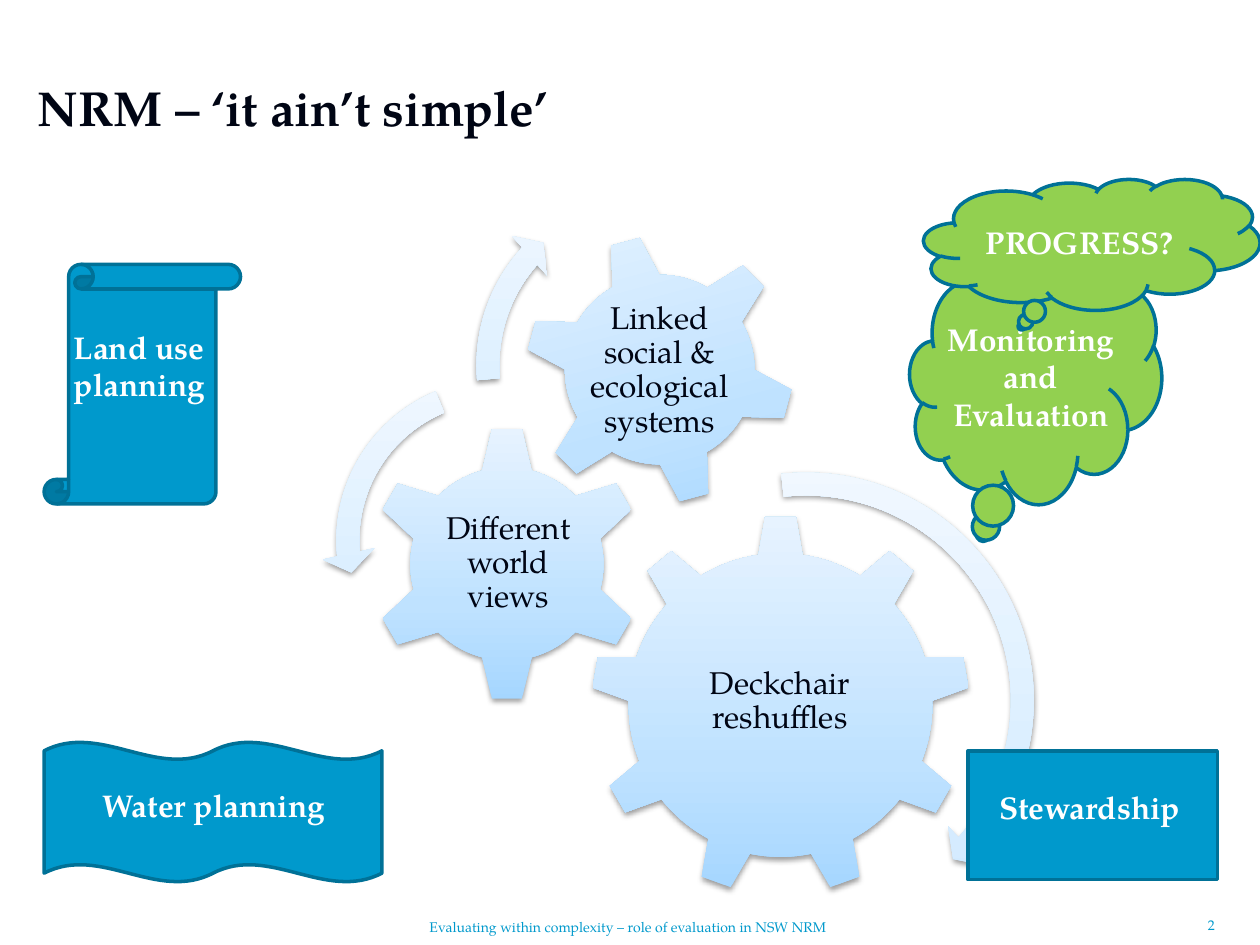
from copy import deepcopy
from dataclasses import dataclass

from lxml import etree
from pptx import Presentation
from pptx.dml.color import RGBColor
from pptx.enum.shapes import MSO_SHAPE
from pptx.enum.text import MSO_ANCHOR, PP_ALIGN
from pptx.oxml.ns import qn
from pptx.util import Cm, Pt

GEAR6, GEAR9 = MSO_SHAPE.GEAR_6, MSO_SHAPE.GEAR_9
ARC, BACK = MSO_SHAPE.CIRCULAR_ARROW, MSO_SHAPE.LEFT_CIRCULAR_ARROW
CLOUD, WAVE = MSO_SHAPE.CLOUD_CALLOUT, MSO_SHAPE.DOUBLE_WAVE
SCROLL, BLOCK = MSO_SHAPE.VERTICAL_SCROLL, MSO_SHAPE.FLOWCHART_PROCESS
TOP, MID = MSO_ANCHOR.TOP, MSO_ANCHOR.MIDDLE
LEFT, MIDST, RIGHT = PP_ALIGN.LEFT, PP_ALIGN.CENTER, PP_ALIGN.RIGHT


@dataclass
class Theme:
    font: str = "TeX Gyre Pagella"
    ink: str = "000514"
    white: str = "FFFFFF"
    blue: str = "0099CC"
    green: str = "92D050"
    edge: str = "007197"
    gear: tuple = ("A5D6FF", "BFE2FF", "E7F3FF")
    arrow: tuple = ("CDE7FF", "DAEEFF", "F1F8FF")
    head: int = 28
    body: int = 18
    foot: int = 8


theme = Theme()


def write(frame, text, size, color, bold=False, align=MIDST, anchor=TOP):
    frame.word_wrap = True
    frame.vertical_anchor = anchor
    line = frame.paragraphs[0]
    line.alignment = align
    run = line.add_run()
    run.text = text
    font = run.font
    font.name, font.size, font.bold = theme.font, Pt(size), bold
    font.color.rgb = RGBColor.from_string(color)
    return line


def shade(shape, colors):
    shape.line.fill.background()
    fill = shape.fill
    fill.gradient()
    fill.gradient_angle = 90
    stops = shape._element.spPr.find(".//" + qn("a:gsLst"))
    stops.append(deepcopy(stops[-1]))
    for stop, place, color in zip(fill.gradient_stops, (0, 0.35, 1), colors):
        stop.position = place
        stop.color.rgb = RGBColor.from_string(color)
    shape.shadow.inherit = False
    effects = shape._element.spPr.find(qn("a:effectLst"))
    glow = etree.SubElement(effects, qn("a:outerShdw"), blurRad="40000",
                            dist="20000", dir="5400000", rotWithShape="0")
    black = etree.SubElement(glow, qn("a:srgbClr"), val="000000")
    etree.SubElement(black, qn("a:alpha"), val="38000")


deck = Presentation()
deck.slide_width, deck.slide_height = Cm(25.4), Cm(19.05)
slide = deck.slides.add_slide(deck.slide_layouts[5])

title = slide.shapes.title
title.left, title.top, title.width, title.height = map(Cm, (0.51, 0.56, 24.13, 3.18))
write(title.text_frame, "NRM – ‘it ain’t simple’", theme.head, theme.ink,
      True, LEFT, MID)

footers = [
    ("2", (23.19, 18.36, 1.55, 0.66), RIGHT),
    ("Evaluating within complexity – role of evaluation in NSW NRM",
     (5.11, 18.39, 15.11, 0.66), MIDST),
]
for text, place, align in footers:
    box = slide.shapes.add_textbox(*map(Cm, place))
    write(box.text_frame, text, theme.foot, theme.blue, align=align)

gears = [
    (GEAR9, (11.91, 10.39, 7.65), 0, "Deckchair reshuffles",
     (13.44, 12.17, 4.57, 3.94)),
    (GEAR6, (7.44, 8.59, 5.56), 0, "Different world views",
     (8.86, 9.98, 2.77, 2.74)),
    (GEAR6, (10.57, 4.72, 5.46), 345, "Linked social & ecological systems",
     (11.76, 5.94, 3.07, 3.07)),
]
works = slide.shapes.add_group_shape().shapes
for kind, (x, y, size), turn, text, place in gears:
    gear = works.add_shape(kind, Cm(x), Cm(y), Cm(size), Cm(size))
    gear.rotation = turn
    shade(gear, theme.gear)
    frame = works.add_textbox(*map(Cm, place)).text_frame
    frame.margin_left = frame.margin_right = Cm(0.08)
    frame.margin_top = frame.margin_bottom = Cm(0.08)
    line = write(frame, text, theme.body, theme.ink, anchor=MID)
    line.line_spacing = 0.9

arrows = [
    (ARC, (11.35, 9.22, 9.8), (0.047, 2.99, 25.327, 158.261, 0.055)),
    (BACK, (6.48, 7.34, 7.11), (0.065, 4.3, 104.891, 148.378, 0.075)),
    (ARC, (9.3, 3.53, 7.67), (0.06, 3.941, 133.138, 105.082, 0.07)),
]
for kind, (x, y, size), bends in arrows:
    arrow = works.add_shape(kind, Cm(x), Cm(y), Cm(size), Cm(size))
    for index, bend in enumerate(bends):
        arrow.adjustments[index] = bend
    shade(arrow, theme.arrow)

themes = [
    (CLOUD, (18.34, 5.21, 5.08, 4.95), theme.green, "Monitoring and Evaluation",
     (18.69, 6.32, 4.19, 2.57), MIDST),
    (WAVE, (0.89, 14.96, 6.81, 2.82), theme.blue, "Water planning",
     (1.3, 15.72, 6.02, 1.02), MIDST),
    (SCROLL, (0.89, 5.33, 3.96, 4.83), theme.blue, "Land use planning",
     (1.24, 6.48, 3.33, 1.8), LEFT),
    (BLOCK, (19.51, 15.14, 5.03, 2.59), theme.blue, "Stewardship",
     (18.82, 15.77, 6.3, 1.02), MIDST),
    (CLOUD, (18.62, 3.61, 6.78, 2.64), theme.green, "PROGRESS?", None, MIDST),
]
for kind, place, color, text, spot, align in themes:
    shape = slide.shapes.add_shape(kind, *map(Cm, place))
    shape.shadow.inherit = False
    shape.fill.solid()
    shape.fill.fore_color.rgb = RGBColor.from_string(color)
    shape.line.color.rgb = RGBColor.from_string(theme.edge)
    shape.line.width = Pt(2)
    label = slide.shapes.add_textbox(*map(Cm, spot)) if spot else shape
    write(label.text_frame, text, theme.body, theme.white, True, align,
          TOP if spot else MID)

deck.save("out.pptx")
